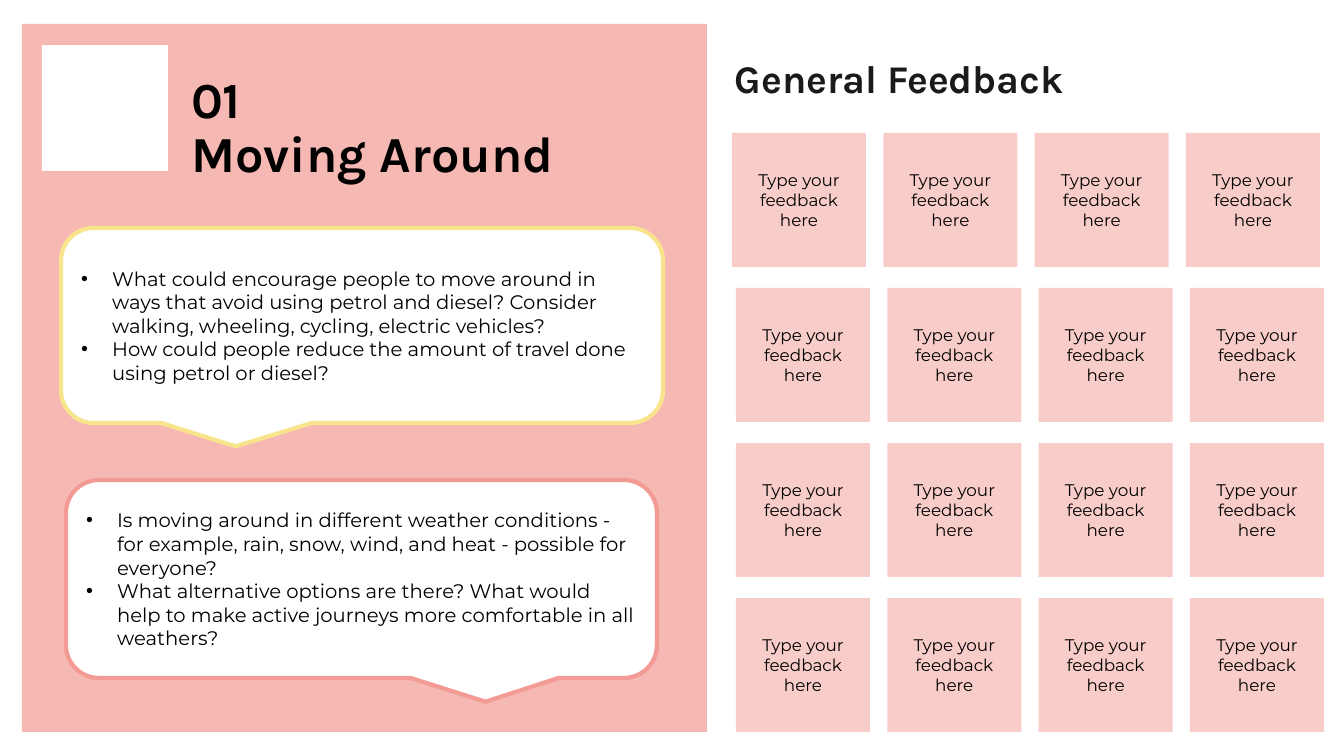
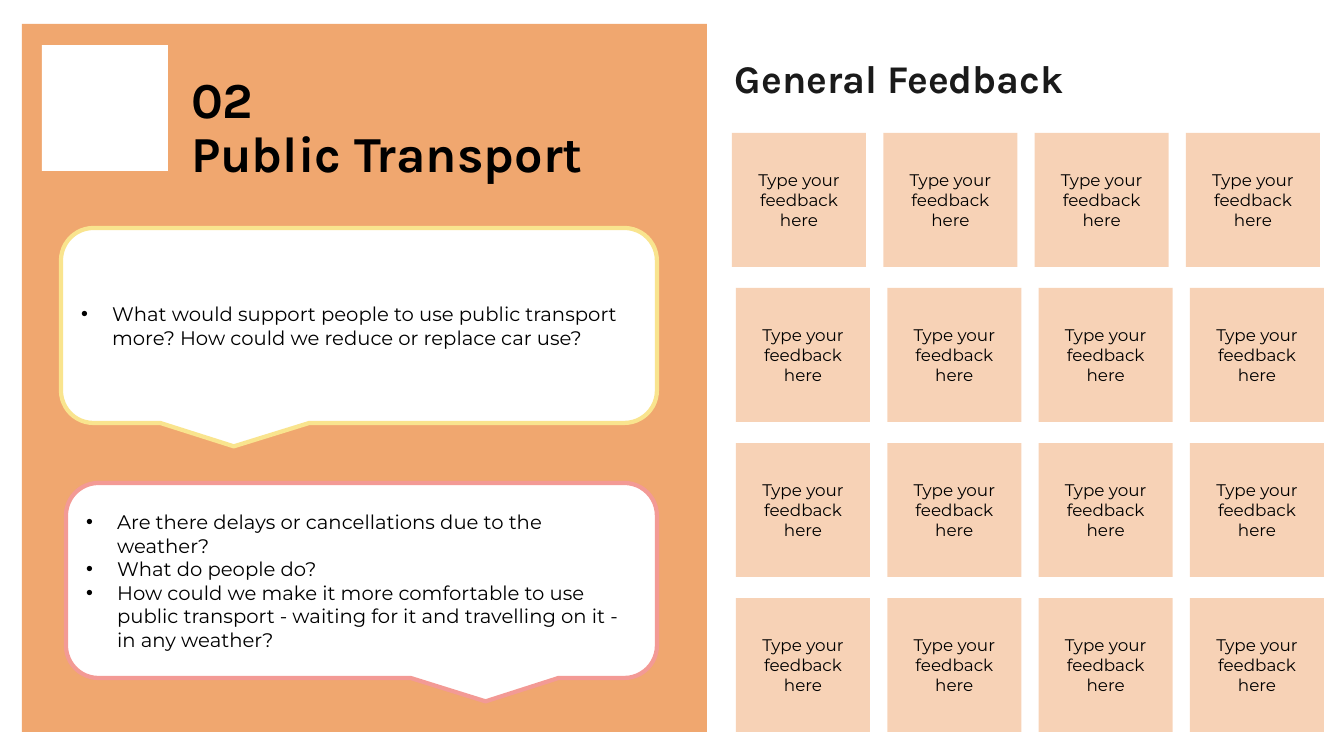
import lxml.etree
import pptx
import pptx.dml.color
import pptx.enum.shapes
import pptx.enum.text
import pptx.oxml.ns
import pptx.util

EMU_PER_INCH = 914400
PX_PER_INCH = 100.8
COLOURS = {
    "white": "FFFFFF",
    "black": "000000",
    "heading": "1A1A1A",
    "yellow": "F9E48E",
    "pink": "F39A95",
    "coral": "F39A92",
    "orange": "F0A76F",
}
SHAPES = pptx.enum.shapes.MSO_SHAPE
ALIGN = pptx.enum.text.PP_ALIGN
FRAME_FORMAT = {
    "word_wrap": True,
    "auto_size": pptx.enum.text.MSO_AUTO_SIZE.NONE,
    "vertical_anchor": pptx.enum.text.MSO_ANCHOR.MIDDLE,
}
TEXT_STYLES = {
    "title": ({"name": "Karla", "size": pptx.util.Pt(36), "bold": True}, "black",
              {"line_spacing": 0.9, "alignment": ALIGN.LEFT}),
    "heading": ({"name": "Karla", "size": pptx.util.Pt(28), "bold": True}, "heading",
                {"line_spacing": 0.9, "alignment": ALIGN.LEFT}),
    "list": ({"name": "Montserrat", "size": pptx.util.Pt(14)}, "black",
             {"space_before": pptx.util.Pt(0), "alignment": ALIGN.LEFT}),
    "card": ({"name": "Montserrat", "size": pptx.util.Pt(12)}, "black",
             {"alignment": ALIGN.CENTER}),
}
TOPICS = [
    {
        "title": "01\vMoving Around",
        "colour": "coral",
        "panel_opacity": 70,
        "callouts": [
            {"box": (61, 228, 602, 195), "line": "yellow", "tail": -0.21, "items": [
                "What could encourage people to move around in ways that avoid using petrol and diesel? Consider walking, wheeling, cycling, electric vehicles?",
                "How could people reduce the amount of travel done using petrol or diesel?",
            ]},
            {"box": (66, 480, 591, 198), "line": "pink", "tail": 0.21, "items": [
                "Is moving around in different weather conditions - for example, rain, snow, wind, and heat - possible for everyone?",
                "What alternative options are there? What would help to make active journeys more comfortable in all weathers?",
            ]},
        ],
    },
    {
        "title": "02\vPublic Transport",
        "colour": "orange",
        "panel_opacity": 100,
        "callouts": [
            {"box": (61, 228, 596, 195), "line": "yellow", "tail": -0.21, "items": [
                "What would support people to use public transport more? How could we reduce or replace car use?",
            ]},
            {"box": (66, 483, 591, 195), "line": "pink", "tail": 0.21, "items": [
                "Are there delays or cancellations due to the weather?",
                "What do people do?",
                "How could we make it more comfortable to use public transport - waiting for it and travelling on it - in any weather?",
            ]},
        ],
    },
]


def px(length):
    return pptx.util.Emu(round(length * EMU_PER_INCH / PX_PER_INCH))


def rgb(name):
    return pptx.dml.color.RGBColor.from_string(COLOURS[name])


def set_all(target, values):
    for name, value in values.items():
        setattr(target, name, value)


def move(shape, box):
    set_all(shape, dict(zip(("left", "top", "width", "height"), map(px, box))))


def write(shape, lines, style):
    font_format, colour, para_format = TEXT_STYLES[style]
    frame = shape.text_frame
    set_all(frame, FRAME_FORMAT)
    frame.text = "\n".join(lines)
    for para in frame.paragraphs:
        set_all(para, para_format)
        for span in para.runs:
            set_all(span.font, font_format)
            span.font.color.rgb = rgb(colour)


def add_block(page, kind, box, colour, opacity=100, line=None):
    block = page.shapes.add_shape(kind, *map(px, box))
    block.shadow.inherit = False
    block.fill.solid()
    block.fill.fore_color.rgb = rgb(colour)
    if opacity < 100:
        fill = block.element.spPr.find(pptx.oxml.ns.qn("a:solidFill"))
        lxml.etree.SubElement(fill[0], pptx.oxml.ns.qn("a:alpha"), val=str(opacity * 1000))
    if line:
        block.line.color.rgb = rgb(line)
        block.line.width = pptx.util.Pt(3)
    else:
        block.line.fill.background()
    return block


def bring_to_front(page, shape):
    page.shapes.element.append(shape.element)


def style_master_title(deck):
    master = deck.slide_master.element
    level = master.find(".//" + pptx.oxml.ns.qn("p:titleStyle")).find(pptx.oxml.ns.qn("a:lvl1pPr"))
    level.find(pptx.oxml.ns.qn("a:defRPr")).set("sz", "3600")


def add_callout(page, placeholder, callout):
    left, top, width, height = callout["box"]
    bubble = add_block(page, SHAPES.ROUNDED_RECTANGULAR_CALLOUT, callout["box"],
                       "white", line=callout["line"])
    bubble.adjustments[0] = callout["tail"]
    bubble.adjustments[1] = 0.62
    inset = 10
    move(placeholder, (left + inset, top + inset, width - 2 * inset, height - 2 * inset))
    write(placeholder, callout["items"], "list")
    for para in placeholder.text_frame.paragraphs:
        properties = para._p.get_or_add_pPr()
        properties.set("marL", str(px(31)))
        properties.set("indent", str(-px(31)))
        bullet_font = lxml.etree.SubElement(properties, pptx.oxml.ns.qn("a:buFont"))
        bullet_font.set("typeface", "Arial")
        lxml.etree.SubElement(properties, pptx.oxml.ns.qn("a:buChar")).set("char", "•")
    bring_to_front(page, placeholder)


def add_topic_panel(page, topic, box):
    left, top, width, height = box
    add_block(page, SHAPES.RECTANGLE, box, topic["colour"], topic["panel_opacity"])
    add_block(page, SHAPES.RECTANGLE, (left + 20, top + 21, 126, 126), "white")
    title = page.shapes.title
    move(title, (left + 159, top + 32, 1159, 146))
    write(title, [topic["title"]], "title")
    bring_to_front(page, title)
    for number, callout in enumerate(topic["callouts"], start=1):
        add_callout(page, page.placeholders[number], callout)


def add_feedback_wall(page, colour, box, rows=4, columns=4, card=134, stagger=4):
    left, top, width, height = box
    heading = page.shapes.add_textbox(*map(px, (left - 7, top - 125, 595, 146)))
    write(heading, ["General Feedback"], "heading")
    column_step = (width - card) / (columns - 1)
    row_step = (height - card) / (rows - 1)
    for row in range(rows):
        row_left = left + (stagger if row else 0)
        for column in range(columns):
            place = (row_left + column * column_step, top + row * row_step, card, card)
            note = add_block(page, SHAPES.RECTANGLE, place, colour, 50)
            write(note, ["Type your feedback here"], "card")


def add_topic_page(deck, topic):
    page = deck.slides.add_slide(deck.slide_layouts.get_by_name("Two Content"))
    add_topic_panel(page, topic, (22, 24, 685, 708))
    add_feedback_wall(page, topic["colour"], (732, 133, 588, 599))


def main():
    deck = pptx.Presentation()
    set_all(deck, {"slide_width": px(1344), "slide_height": px(756)})
    style_master_title(deck)
    for topic in TOPICS:
        add_topic_page(deck, topic)
    deck.save("out.pptx")


if __name__ == "__main__":
    main()
